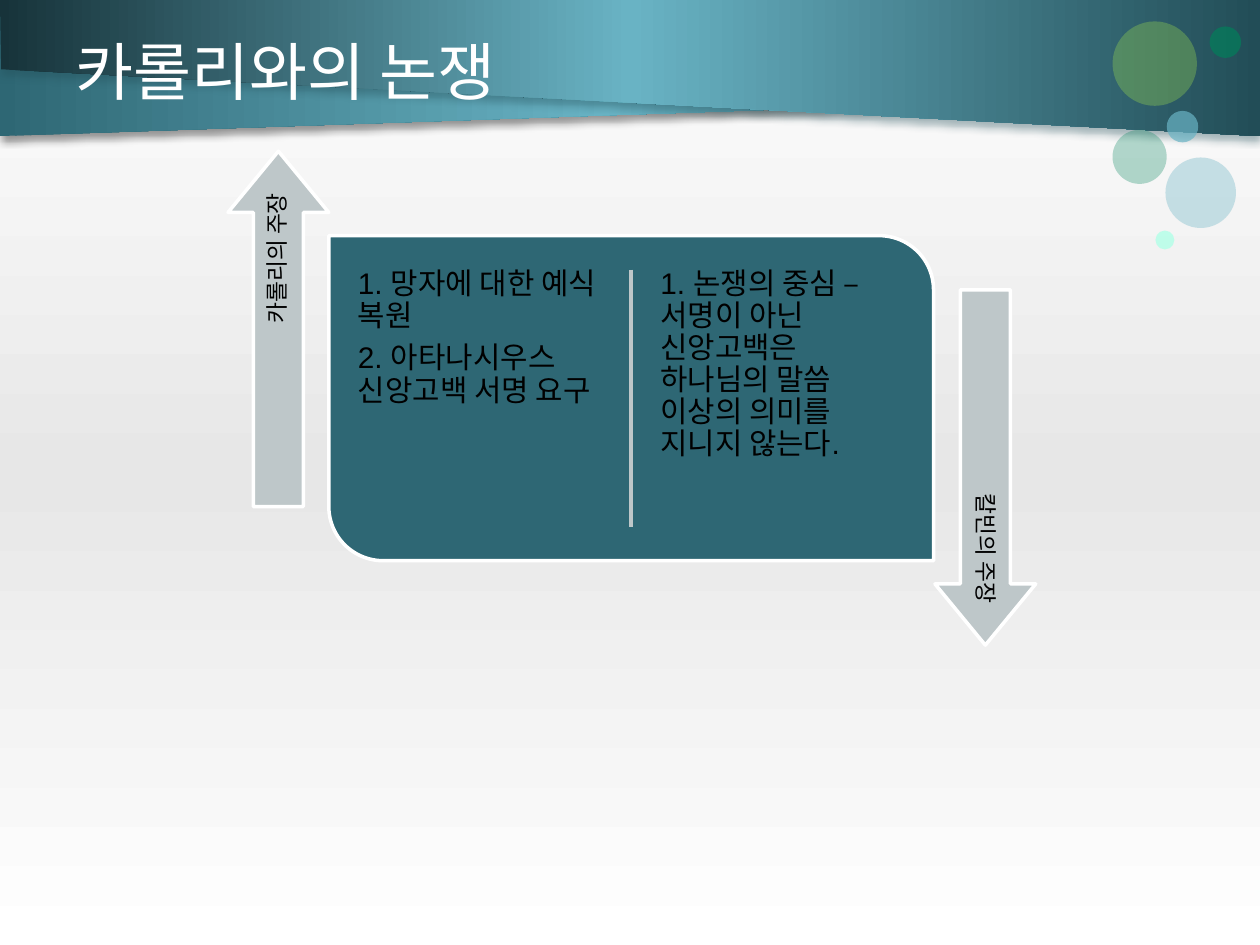
from copy import deepcopy

from lxml.etree import SubElement
from pptx import Presentation
from pptx.dml.color import RGBColor
from pptx.enum.shapes import MSO_CONNECTOR, MSO_SHAPE as SHAPE
from pptx.enum.text import MSO_ANCHOR as ANCHOR, PP_ALIGN as ALIGN
from pptx.oxml.ns import qn
from pptx.util import Pt

PX = 9144  # 100 px to the inch
TEAL, DARK, SKY, GREY = "2E6774", "224D57", "69B3C4", "BEC7C9"
GREEN, WHITE, BLACK = "00825A", "FFFFFF", "000000"


def rgb(color):
    return RGBColor.from_string(color)


def px(*lengths):
    return [n * PX for n in lengths]


def set_gradient(fill, element, colors, angle):
    """Spread three colours evenly, with the angle counted anticlockwise."""
    fill.gradient()
    fill.gradient_angle = angle
    stops = element.find(".//" + qn("a:gsLst"))
    stops.insert(1, deepcopy(stops[0]))
    for i, (stop, color) in enumerate(zip(fill.gradient_stops, colors)):
        stop.position = i / 2
        stop.color.rgb = rgb(color)


def set_alpha(color_element, percent):
    SubElement(color_element, qn("a:alpha"), val=str(percent * 1000))


def add_shadow(sp, color):
    effects = sp.element.spPr.find(qn("a:effectLst"))
    shadow = SubElement(effects, qn("a:outerShdw"), blurRad=str(Pt(4)),
                        dist=str(Pt(3)), dir="5400000", rotWithShape="0")
    set_alpha(SubElement(shadow, qn("a:srgbClr"), val=color), 40)


def add_shape(s, kind, box, color, line=None):
    sp = s.shapes.add_shape(kind, *px(*box))
    sp.shadow.inherit = False
    sp.fill.solid()
    sp.fill.fore_color.rgb = rgb(color)
    if line:
        sp.line.color.rgb = rgb(line)
        sp.line.width = Pt(2)
    else:
        sp.line.fill.background()
    return sp


def set_text(tf, lines, size, color=BLACK, font="Arial", align=ALIGN.LEFT,
             anchor=ANCHOR.TOP, inset=None, spacing=None, after=None):
    tf.word_wrap = True
    tf.vertical_anchor = anchor
    if inset is not None:
        tf.margin_left = tf.margin_right = inset * PX
        tf.margin_top = tf.margin_bottom = inset * PX
    tf.text = "\n".join(lines)
    for p in tf.paragraphs:
        p.alignment, p.line_spacing, p.space_after = align, spacing, after
        for r in p.runs:
            r.font.size, r.font.name = Pt(size), font
            r.font.color.rgb = rgb(color)


def add_banner(s, x, y, w, h):
    bands = [
        ([(0, 0), (967, 75), (0, h)], (TEAL, SKY, DARK), BLACK),
        ([(w, 0), (0, 0), (1, 55), (w, h)], ("17333A", SKY, DARK), DARK),
    ]
    for points, colors, shadow in bands:
        (x0, y0), *rest = [(x + dx, y + dy) for dx, dy in points]
        builder = s.shapes.build_freeform(x0, y0, scale=PX)
        builder.add_line_segments(rest, close=True)
        sp = builder.convert_to_shape()
        sp.shadow.inherit = False
        sp.line.fill.background()
        set_gradient(sp.fill, sp.element, colors, 0)
        add_shadow(sp, shadow)


def add_bubbles(s, x, y):
    bubbles = [
        (34, 166, 15, "B3FFE8", 82), (0, 86, 43, GREEN, 29),
        (42, 108, 56, SKY, 35), (43, 71, 25, SKY, 70),
        (0, 0, 67, "93D151", 36), (77, 4, 25, GREEN, 65),
    ]
    for dx, dy, size, color, opacity in bubbles:
        sp = add_shape(s, SHAPE.OVAL, (x + dx, y + dy, size, size), color)
        set_alpha(sp.element.spPr.find(".//" + qn("a:srgbClr")), opacity)


def add_title(s, x, y, w, h, text):
    tb = s.shapes.add_textbox(*px(x, y, w, h))
    set_text(tb.text_frame, [text], 36, WHITE, "Lato", anchor=ANCHOR.MIDDLE)


def add_panel(s, x, y, w, h, columns):
    panel = add_shape(s, SHAPE.ROUND_2_DIAG_RECTANGLE, (x, y, w, h), TEAL, WHITE)
    panel.adjustments[0], panel.adjustments[1] = 0, 0.167
    mid = x + w // 2
    divider = s.shapes.add_connector(
        MSO_CONNECTOR.STRAIGHT, *px(mid, y + 27, mid, y + h - 27))
    divider.line.color.rgb = rgb(GREY)
    divider.line.width = Pt(2)
    SubElement(divider.element.spPr, qn("a:effectLst"))
    for i, lines in enumerate(columns):
        tb = s.shapes.add_textbox(*px(x + 16 + i * w // 2, y + 19, 208, 219))
        set_text(tb.text_frame, lines, 17, inset=7, spacing=0.9, after=Pt(6))


def add_side_arrow(s, x, y, w, h, rotation, text):
    """Place an upright arrow: the box is the one seen after rotation."""
    box = (x + (w - h) // 2, y + (h - w) // 2, h, w)
    sp = add_shape(s, SHAPE.RIGHT_ARROW, box, GREY, WHITE)
    sp.rotation = rotation
    sp.adjustments[0], sp.adjustments[1] = 0.498, 0.607
    set_text(sp.text_frame, [text], 13, align=ALIGN.RIGHT,
             anchor=ANCHOR.MIDDLE, inset=5, spacing=0.9)


def main():
    prs = Presentation()
    prs.slide_width, prs.slide_height = px(1000, 750)
    s = prs.slides.add_slide(prs.slide_layouts[6])
    set_gradient(s.background.fill, s.element, (WHITE, "E7E7E7", WHITE), 270)

    add_banner(s, 0, 0, 1000, 108)
    add_bubbles(s, 883, 17)
    add_title(s, 50, 8, 900, 95, "카롤리와의 논쟁")
    add_panel(s, 261, 187, 480, 258, [
        ["1. 망자에 대한 예식 복원", "2. 아타나시우스 신앙고백 서명 요구"],
        ["1. 논쟁의 중심 – 서명이 아닌 신앙고백은 하나님의 말씀 이상의 의미를 "
         "지니지 않는다."],
    ])
    add_side_arrow(s, 181, 120, 80, 282, 270, "카롤리의 주장 ")
    add_side_arrow(s, 742, 230, 80, 282, 90, "칼빈의 주장 ")
    prs.save("out.pptx")


if __name__ == "__main__":
    main()
